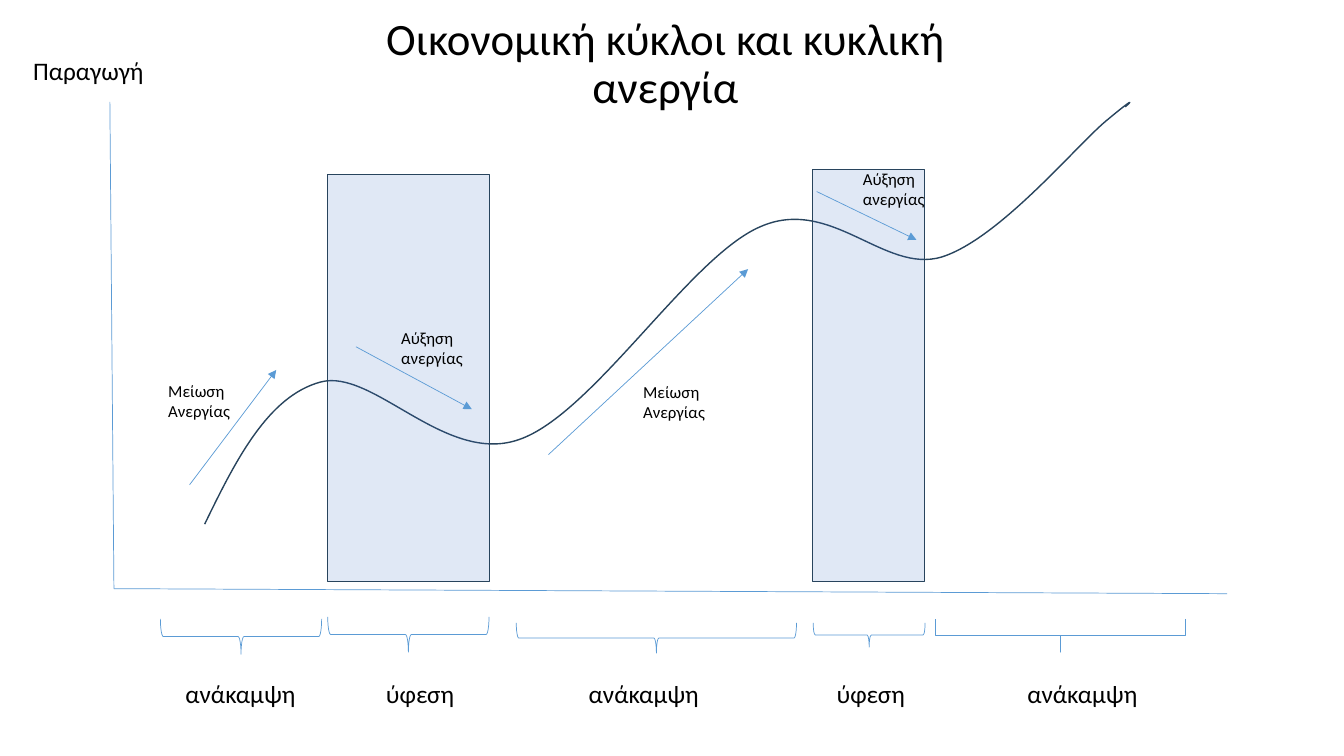
"""Build a slide on business cycles and cyclical unemployment."""
from lxml.etree import SubElement
from pptx import Presentation
from pptx.dml.color import RGBColor
from pptx.enum.shapes import MSO_CONNECTOR as Connector, MSO_SHAPE as Preset
from pptx.enum.text import MSO_ANCHOR as Anchor, MSO_AUTO_SIZE as AutoSize, PP_ALIGN as Align
from pptx.oxml.ns import qn
from pptx.util import Inches, Pt

TITLE = "Οικονομική κύκλοι και κυκλική ανεργία"
AXIS_LABEL = ("Παραγωγή", 0.23, 0.5)
BLUE, NAVY, SHADE, BLACK = "5B9BD5", "28445D", "4472C4", "000000"
SHADE_ALPHA = 16

AXES = [((1.09, 1.01), (1.13, 5.84)), ((12.17, 5.89), (1.13, 5.84))]
OUTPUT_BOUNDS = (2.03, 1.01, 9.18, 4.19)
OUTPUT_START = (2.03, 5.2)
OUTPUT_CURVE = [
    ((2.34, 4.56), (2.66, 3.93), (3.18, 3.79)),
    ((3.7, 3.65), (4.42, 4.62), (5.15, 4.36)),
    ((5.88, 4.11), (6.84, 2.55), (7.54, 2.25)),
    ((8.24, 1.94), (8.77, 2.72), (9.34, 2.55)),
    ((9.91, 2.37), (10.67, 1.45), (10.97, 1.2)),
    ((11.27, 0.95), (11.22, 1.01), (11.16, 1.06)),
]
RECESSIONS = [(3.25, 1.73, 1.6, 4.04), (8.06, 1.68, 1.11, 4.09)]

# word, word left, brace centre, brace top, brace span, brace depth, curl
PHASES = [
    ("ανάκαμψη", 1.74, 2.39, 6.14, 1.6, 0.35, 0.08333),
    ("ύφεση", 3.73, 4.05, 6.12, 1.6, 0.35, 0.08333),
    ("ανάκαμψη", 5.74, 6.51, 6.18, 2.78, 0.3, 0.08333),
    ("ύφεση", 8.2, 8.62, 6.18, 1.11, 0.24, 0.08333),
    ("ανάκαμψη", 10.09, 10.52, 6.14, 2.48, 0.33, 0),
]
PHASE_TOP = 6.68
FALL, RISE = "Μείωση\nΑνεργίας", "Αύξηση\nανεργίας"
# words, words left and top, arrow start, arrow end
TRENDS = [
    (FALL, (1.57, 3.73), (1.88, 4.81), (2.74, 3.67)),
    (FALL, (6.28, 3.74), (5.44, 4.51), (7.42, 2.67)),
    (RISE, (3.88, 3.2), (3.53, 3.44), (4.68, 4.06)),
    (RISE, (8.46, 1.62), (8.1, 1.9), (9.09, 2.38)),
]
WIDTHS = {"Παραγωγή": 1.31, "ανάκαμψη": 1.31, "ύφεση": 0.89, FALL: 0.82, RISE: 0.82}


def color(value):
    return RGBColor.from_string(value)


def apply(target, settings):
    for key, value in settings.items():
        setattr(target, key, value)


def write(frame, text, size, frame_format, paragraph_format):
    frame.text = text
    apply(frame, frame_format)
    for paragraph in frame.paragraphs:
        apply(paragraph, paragraph_format)
        for run in paragraph.runs:
            apply(run.font, {"name": "Calibri", "size": Pt(size)})
            run.font.color.rgb = color(BLACK)


def add_label(shapes, text, left, top, size, height):
    box = shapes.add_textbox(*map(Inches, (left, top, WIDTHS[text], height)))
    write(box.text_frame, text, size,
          {"word_wrap": False, "auto_size": AutoSize.SHAPE_TO_FIT_TEXT},
          {"alignment": Align.LEFT})


def outline(shape, line_color, width):
    shape.line.color.rgb = color(line_color)
    shape.line.width = Pt(width)


def add_line(shapes, start, end, arrow=False):
    line = shapes.add_connector(Connector.STRAIGHT, *map(Inches, start + end))
    outline(line, BLUE, 0.5)
    if arrow:
        SubElement(line.line._get_or_add_ln(), qn("a:tailEnd"), type="triangle")
    SubElement(line._element.spPr, qn("a:effectLst"))


def add_output_curve(shapes):
    left, top, width, height = map(Inches, OUTPUT_BOUNDS)
    builder = shapes.build_freeform(*map(Inches, OUTPUT_START))
    builder.add_line_segments(
        [tuple(map(Inches, bend[-1])) for bend in OUTPUT_CURVE], close=False)
    curve = builder.convert_to_shape()
    apply(curve, {"left": left, "top": top, "width": width, "height": height})
    track = next(curve._element.iter(qn("a:path")))
    for child in list(track):
        track.remove(child)
    track.set("w", str(width))
    track.set("h", str(height))
    moves = [("a:moveTo", [OUTPUT_START])]
    moves += [("a:cubicBezTo", bend) for bend in OUTPUT_CURVE]
    for tag, points in moves:
        move = SubElement(track, qn(tag))
        for x, y in points:
            SubElement(move, qn("a:pt"), x=str(Inches(x) - left), y=str(Inches(y) - top))
    curve.shadow.inherit = False
    curve.fill.background()
    outline(curve, NAVY, 1)


def add_brace(shapes, centre, top, span, depth, curl):
    left, unturned_top = centre - depth / 2, top + (depth - span) / 2
    brace = shapes.add_shape(
        Preset.RIGHT_BRACE, *map(Inches, (left, unturned_top, depth, span)))
    brace.rotation = 90
    brace.adjustments[0] = curl
    brace.shadow.inherit = False
    brace.fill.background()
    outline(brace, BLUE, 0.5)


def add_recession(shapes, bounds):
    band = shapes.add_shape(Preset.RECTANGLE, *map(Inches, bounds))
    band.shadow.inherit = False
    band.fill.solid()
    band.fill.fore_color.rgb = color(SHADE)
    tint = band._element.spPr.find(qn("a:solidFill")).find(qn("a:srgbClr"))
    SubElement(tint, qn("a:alpha"), val=str(SHADE_ALPHA * 1000))
    outline(band, NAVY, 0.25)


def main():
    deck = Presentation()
    apply(deck, {"slide_width": Inches(13.33), "slide_height": Inches(7.5)})
    shapes = deck.slides.add_slide(deck.slide_layouts[5]).shapes
    title = shapes.title
    apply(title, {"left": Inches(2.97), "top": Inches(0.28),
                  "width": Inches(7.26), "height": Inches(0.73)})
    write(title.text_frame, TITLE, 32,
          {"word_wrap": True, "auto_size": AutoSize.NONE, "vertical_anchor": Anchor.MIDDLE},
          {"alignment": Align.CENTER, "line_spacing": 0.9})

    for start, end in AXES:
        add_line(shapes, start, end)
    add_output_curve(shapes)
    add_label(shapes, *AXIS_LABEL, 18, 0.4)
    for _, _, *brace in PHASES:
        add_brace(shapes, *brace)
    for bounds in RECESSIONS:
        add_recession(shapes, bounds)
    for word, left, *_ in PHASES:
        add_label(shapes, word, left, PHASE_TOP, 18, 0.4)
    for words, corner, start, end in TRENDS:
        add_line(shapes, start, end, arrow=True)
        add_label(shapes, words, *corner, 12, 0.5)
    deck.save("out.pptx")


if __name__ == "__main__":
    main()
